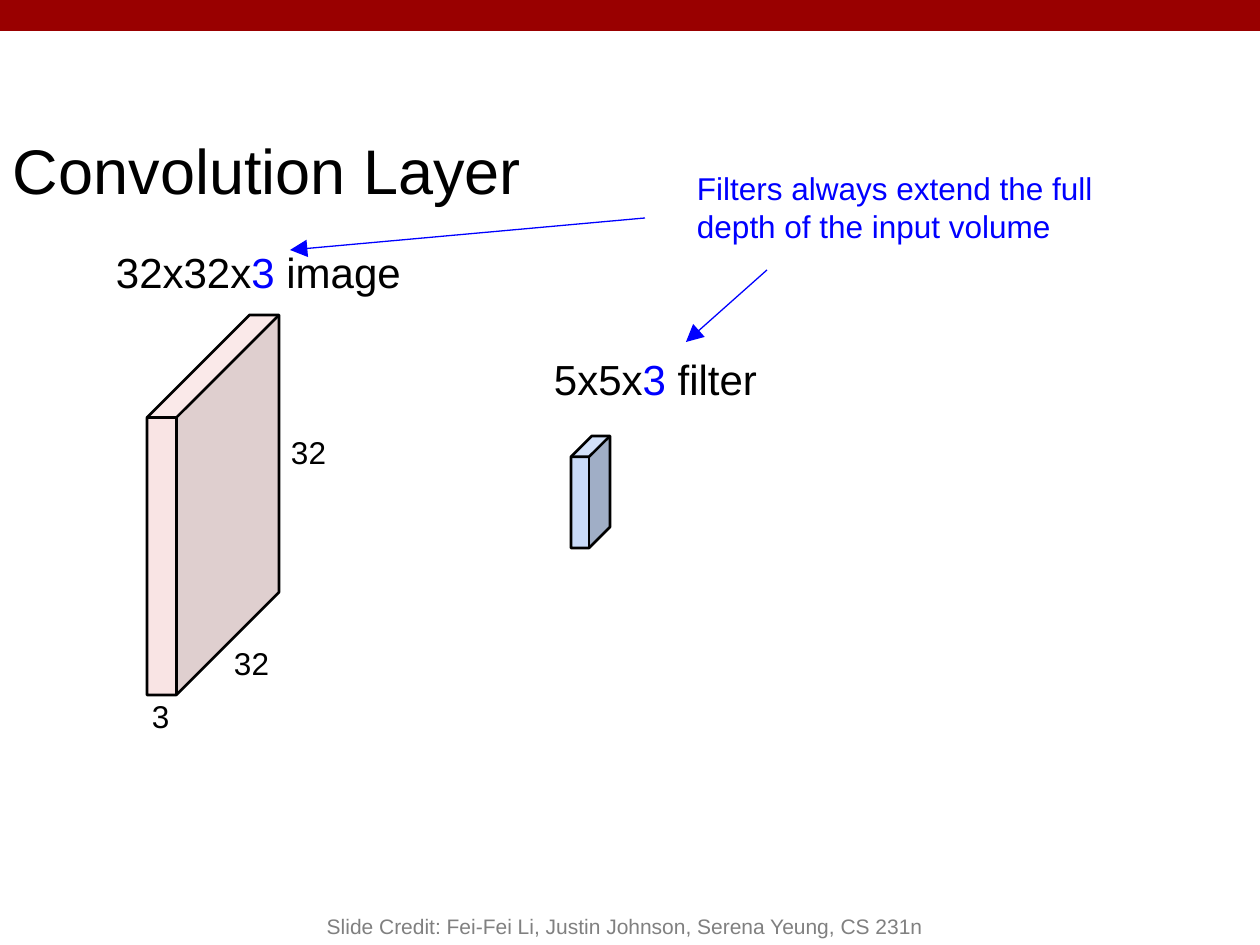
from lxml.etree import SubElement
from pptx import Presentation
from pptx.dml.color import RGBColor
from pptx.enum.shapes import MSO_CONNECTOR as CONN, MSO_SHAPE as SHAPE
from pptx.enum.text import MSO_ANCHOR as ANCHOR, MSO_AUTO_SIZE as FIT, PP_ALIGN as ALIGN
from pptx.oxml.ns import qn
from pptx.util import Emu, Pt

SCALE = 914400 / 126  # EMU per px
COLORS = {"bar": "990000", "image": "F4CCCC", "filter": "C9DAF8",
          "black": "000000", "blue": "0000FF", "gray": "808080"}


def px(*values):
    return [Emu(round(v * SCALE)) for v in values]


def set_text(s, runs, size, inset=13, anchor=ANCHOR.TOP, align=ALIGN.LEFT):
    tf = s.text_frame
    tf.word_wrap = True
    tf.auto_size = FIT.NONE
    tf.vertical_anchor = anchor
    tf.margin_left, tf.margin_right, tf.margin_top, tf.margin_bottom = px(*[inset] * 4)
    p = tf.paragraphs[0]
    p.alignment = align
    for text, color in runs:
        r = p.add_run()
        r.text = text
        r.font.name = "Arial"
        r.font.size = Pt(size)
        r.font.color.rgb = RGBColor.from_string(COLORS[color])


prs = Presentation()
prs.slide_width, prs.slide_height = px(1260, 945)
slide = prs.slides.add_slide(prs.slide_layouts[5])
shapes = slide.shapes

# Top bar
bar = shapes.add_shape(SHAPE.RECTANGLE, *px(0, 0, 1260, 31))
bar.shadow.inherit = False
bar.fill.solid()
bar.fill.fore_color.rgb = RGBColor.from_string(COLORS["bar"])
bar.line.fill.background()

# Title
title = shapes.title
title.left, title.top, title.width, title.height = px(0, 118, 1061, 91)
set_text(title, [("Convolution Layer", "black")], 36)

# Image and filter volumes: box, depth ratio, colour, opacity in percent
cubes = [((147, 315, 132, 380), 0.777, "image", 52),
         ((571, 436, 39, 112), 0.534, "filter", 100)]
for box, depth, color, opacity in cubes:
    s = shapes.add_shape(SHAPE.CUBE, *px(*box))
    s.shadow.inherit = False
    s.adjustments[0] = depth
    s.fill.solid()
    s.fill.fore_color.rgb = RGBColor.from_string(COLORS[color])
    s.line.color.rgb = RGBColor.from_string(COLORS["black"])
    s.line.width = Pt(1.5)
    if opacity < 100:
        clr = s.fill._xPr.find(".//" + qn("a:srgbClr"))
        SubElement(clr, qn("a:alpha"), val=str(opacity * 1000))

# Dimensions, volume names and note
labels = [
    ((221, 631, 68, 43), 18, [("32", "black")]),
    ((278, 420, 68, 39), 18, [("32", "black")]),
    ((139, 685, 68, 25), 18, [("3", "black")]),
    ((541, 341, 291, 49), 24, [("5x5x", "black"), ("3", "blue"), (" filter", "black")]),
    ((103, 234, 461, 66), 24, [("32x32x", "black"), ("3", "blue"), (" image", "black")]),
    ((684, 156, 452, 81), 18,
     [("Filters always extend the full depth of the input volume", "blue")]),
]
for box, size, runs in labels:
    set_text(shapes.add_textbox(*px(*box)), runs, size)

# Arrows from the note to the two depths
for ends in [(767, 270, 686, 342), (645, 218, 290, 250)]:
    line = shapes.add_connector(CONN.STRAIGHT, *px(*ends))
    line.line.color.rgb = RGBColor.from_string(COLORS["blue"])
    line.line.width = Pt(0.75)
    SubElement(line.line._get_or_add_ln(), qn("a:tailEnd"), type="triangle", w="lg", len="lg")
    SubElement(line._element.spPr, qn("a:effectLst"))

# Credit
credit = shapes.add_textbox(*px(252, 882, 746, 63))
set_text(credit, [("Slide Credit: Fei-Fei Li, Justin Johnson, Serena Yeung, CS 231n", "gray")],
         12, inset=6, anchor=ANCHOR.BOTTOM, align=ALIGN.CENTER)

prs.save("out.pptx")
